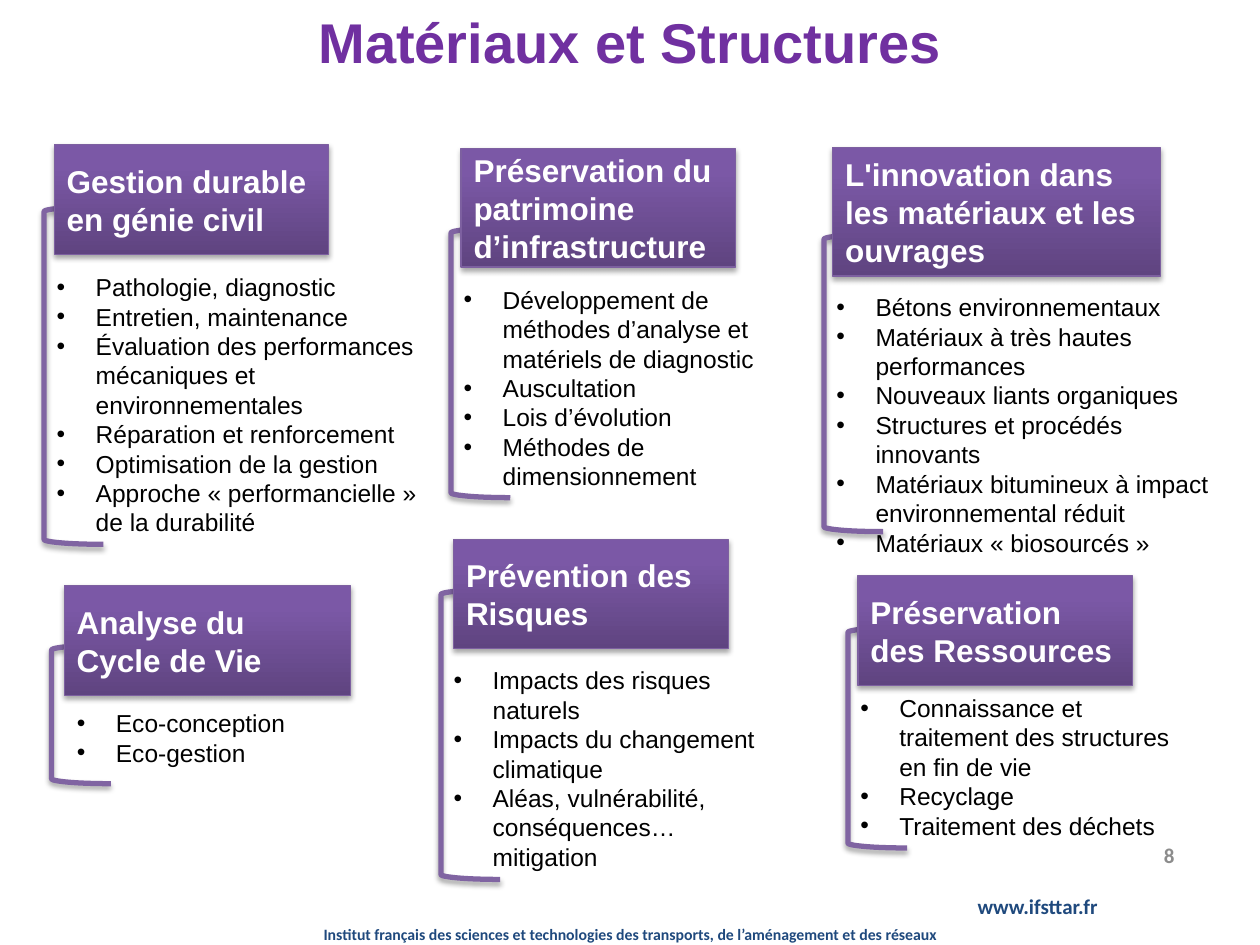
import copy
from dataclasses import dataclass

import lxml.etree
import pptx
import pptx.dml.color
import pptx.enum.shapes
import pptx.enum.text
import pptx.oxml.ns
import pptx.util

Inches, Pt = pptx.util.Inches, pptx.util.Pt
RGB = pptx.dml.color.RGBColor.from_string
MSO_SHAPE = pptx.enum.shapes.MSO_SHAPE
ALIGN = pptx.enum.text.PP_ALIGN
ANCHOR = pptx.enum.text.MSO_ANCHOR
qn = pptx.oxml.ns.qn


@dataclass(frozen=True)
class Theme:
    title = dict(name="Arial", size=Pt(32), bold=True, color="7030A0")
    heading = dict(name="Arial", size=Pt(18), bold=True, color="FFFFFF")
    body = dict(name="Arial", size=Pt(14), bold=False, color="000000")
    site = dict(name="Calibri", size=Pt(12), bold=True, color="1F497D")
    footer = dict(name="Calibri", size=Pt(9), bold=True, color="1F497D")
    number = dict(name="Calibri", size=Pt(12), bold=True, color="8C8C8C")
    gradient = ((0, "5F4480"), (0.8, "7B58A6"), (1, "7C57A8"))
    box_line = "7D60A0"
    bracket = "8064A2"
    indent = Inches(0.31)


class Deck:
    """Holds the theme, the slide and its body placeholders not yet used."""

    def __init__(self, slide, theme):
        self.s, self.theme = slide, theme
        self.bodies = [ph for ph in slide.placeholders
                       if ph.placeholder_format.idx > 0]

    def set_text(self, sp, lines, style, align=ALIGN.LEFT, anchor=ANCHOR.TOP):
        tf = sp.text_frame
        tf.text = "\n".join(lines)
        tf.word_wrap = True
        tf.auto_size = pptx.enum.text.MSO_AUTO_SIZE.NONE
        tf.vertical_anchor = anchor
        for p in tf.paragraphs:
            p.alignment = align
            p.space_before = Pt(0)
            for r in p.runs:
                for key, value in style.items():
                    if key == "color":
                        r.font.color.rgb = RGB(value)
                    else:
                        setattr(r.font, key, value)

    def place(self, sp, at):
        for key, value in zip(("left", "top", "width", "height"), at):
            setattr(sp, key, Inches(value))

    def title(self, at, text):
        sp = self.s.shapes.title
        self.place(sp, at)
        self.set_text(sp, [text], self.theme.title, ALIGN.CENTER, ANCHOR.MIDDLE)

    def text(self, at, text, style, **layout):
        sp = self.s.shapes.add_textbox(*map(Inches, at))
        self.set_text(sp, [text], style, **layout)

    def bullets(self, at, items):
        """Fill the next free body placeholder, or a text box once all are used."""
        if self.bodies:
            sp = self.bodies.pop(0)
            self.place(sp, at)
        else:
            sp = self.s.shapes.add_textbox(*map(Inches, at))
        self.set_text(sp, items, self.theme.body)
        for p in sp.text_frame.paragraphs:
            pPr = p._p.get_or_add_pPr()
            pPr.set("marL", str(self.theme.indent))
            pPr.set("indent", str(-self.theme.indent))
            lxml.etree.SubElement(pPr, qn("a:buFont"), typeface="Arial")
            lxml.etree.SubElement(pPr, qn("a:buChar"), char="•")

    def shape(self, kind, at, line, width):
        """Add an outlined preset shape with a soft shadow below it."""
        sp = self.s.shapes.add_shape(kind, *map(Inches, at))
        sp.line.color.rgb = RGB(line)
        sp.line.width = Pt(width)
        sp.shadow.inherit = False
        effects = sp._element.spPr.find(qn("a:effectLst"))
        shadow = lxml.etree.SubElement(
            effects, qn("a:outerShdw"), blurRad=str(Pt(3.1)),
            dist=str(Pt(1.8)), dir="5400000", rotWithShape="0")
        color = lxml.etree.SubElement(shadow, qn("a:srgbClr"), val="000000")
        lxml.etree.SubElement(color, qn("a:alpha"), val="35000")
        return sp

    def bracket(self, at):
        sp = self.shape(MSO_SHAPE.LEFT_BRACKET, at, self.theme.bracket, 3)
        sp.fill.background()

    def heading(self, at, lines):
        sp = self.shape(MSO_SHAPE.RECTANGLE, at, self.theme.box_line, 0.75)
        sp.fill.gradient()
        sp.fill.gradient_angle = 90
        stops = sp._element.spPr.find(".//" + qn("a:gsLst"))
        stops.append(copy.deepcopy(stops[-1]))
        for stop, (position, color) in zip(sp.fill.gradient_stops, self.theme.gradient):
            stop.position = position
            stop.color.rgb = RGB(color)
        self.set_text(sp, lines, self.theme.heading, anchor=ANCHOR.MIDDLE)

    def card(self, heading, heading_at, bracket_at, items, list_at):
        self.bracket(bracket_at)
        self.heading(heading_at, heading)
        self.bullets(list_at, items)


CARDS = [
    (["Gestion durable", "en génie civil"],
     (0.43, 1.15, 2.18, 0.87), (0.35, 1.64, 0.47, 2.68),
     ["Pathologie, diagnostic", "Entretien, maintenance",
      "Évaluation des performances mécaniques et environnementales",
      "Réparation et renforcement", "Optimisation de la gestion",
      "Approche « performancielle » de la durabilité"],
     (0.35, 2.11, 3.07, 2.22)),
    (["Analyse du", "Cycle de Vie"],
     (0.51, 4.65, 2.27, 0.87), (0.41, 5.12, 0.47, 1.1),
     ["Eco-conception", "Eco-gestion"],
     (0.51, 5.57, 2.6, 0.57)),
    (["Préservation du patrimoine d’infrastructure"],
     (3.66, 1.18, 2.18, 0.94), (3.58, 1.81, 0.47, 2.14),
     ["Développement de méthodes d’analyse et matériels de diagnostic",
      "Auscultation", "Lois d’évolution", "Méthodes de dimensionnement"],
     (3.58, 2.21, 2.6, 1.75)),
    (["Prévention des Risques"],
     (3.6, 4.28, 2.18, 0.87), (3.5, 4.68, 0.47, 2.3),
     ["Impacts des risques naturels", "Impacts du changement climatique",
      "Aléas, vulnérabilité, conséquences… mitigation"],
     (3.5, 5.23, 2.83, 1.75)),
    (["L'innovation dans les matériaux et les ouvrages"],
     (6.61, 1.17, 2.6, 1.02), (6.54, 1.86, 0.47, 2.36),
     ["Bétons environnementaux", "Matériaux à très hautes performances",
      "Nouveaux liants organiques", "Structures et procédés innovants",
      "Matériaux bitumineux à impact environnemental réduit",
      "Matériaux « biosourcés »"],
     (6.54, 2.27, 3.35, 1.99)),
    (["Préservation des Ressources"],
     (6.81, 4.57, 2.18, 0.87), (6.73, 4.98, 0.47, 1.75),
     ["Connaissance et traitement des structures en fin de vie",
      "Recyclage", "Traitement des déchets"],
     (6.73, 5.45, 2.76, 1.28)),
]


def main():
    prs = pptx.Presentation()
    prs.slide_width, prs.slide_height = Inches(10), Inches(7.5)
    comparison = prs.slide_layouts.get_by_name("Comparison")
    theme = Theme()
    deck = Deck(prs.slides.add_slide(comparison), theme)

    deck.title((0.5, -0.03, 9, 0.71), "Matériaux et Structures")
    for card in CARDS:
        deck.card(*card)
    deck.text((0, 7.29, 10, 0.25),
              "Institut français des sciences et technologies des transports, "
              "de l’aménagement et des réseaux", theme.footer, align=ALIGN.CENTER)
    deck.text((7.66, 7.04, 1.18, 0.3), "www.ifsttar.fr", theme.site)
    deck.text((8.94, 6.59, 0.48, 0.4), "8", theme.number,
              align=ALIGN.RIGHT, anchor=ANCHOR.MIDDLE)
    prs.save("out.pptx")


if __name__ == "__main__":
    main()
